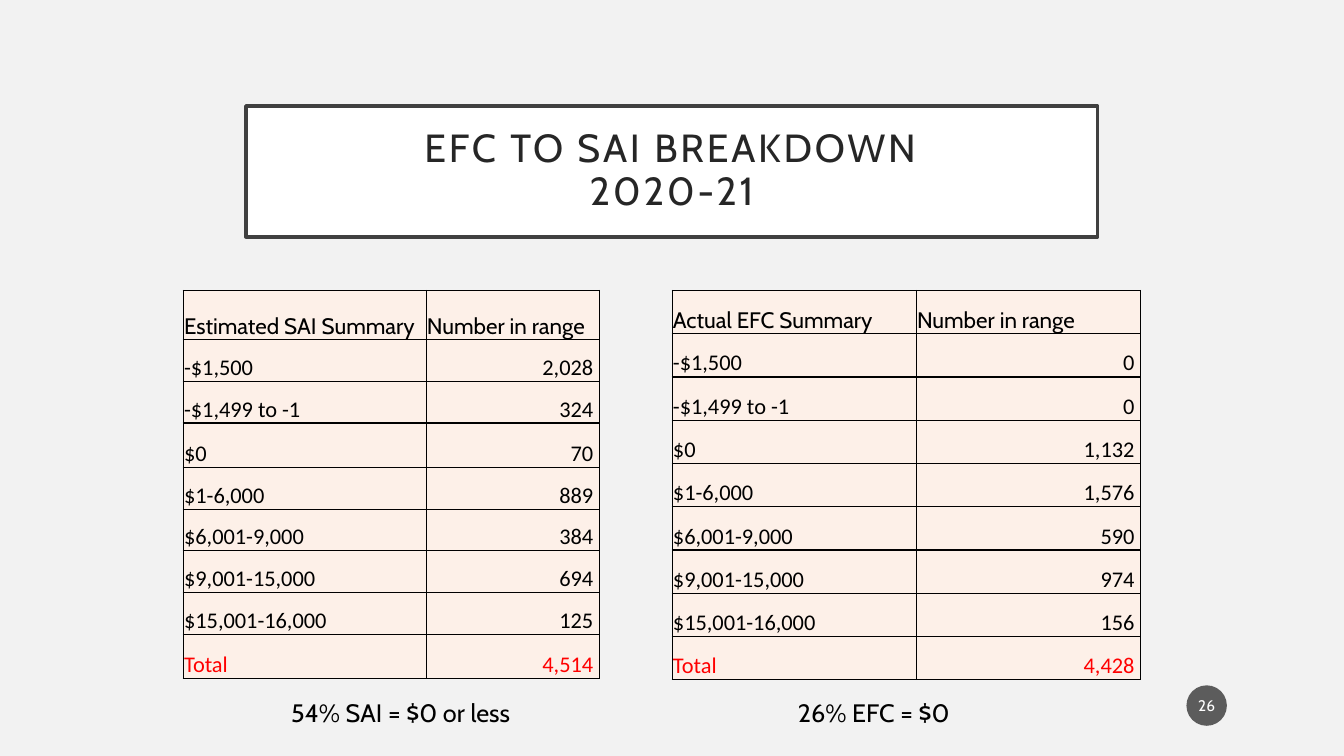
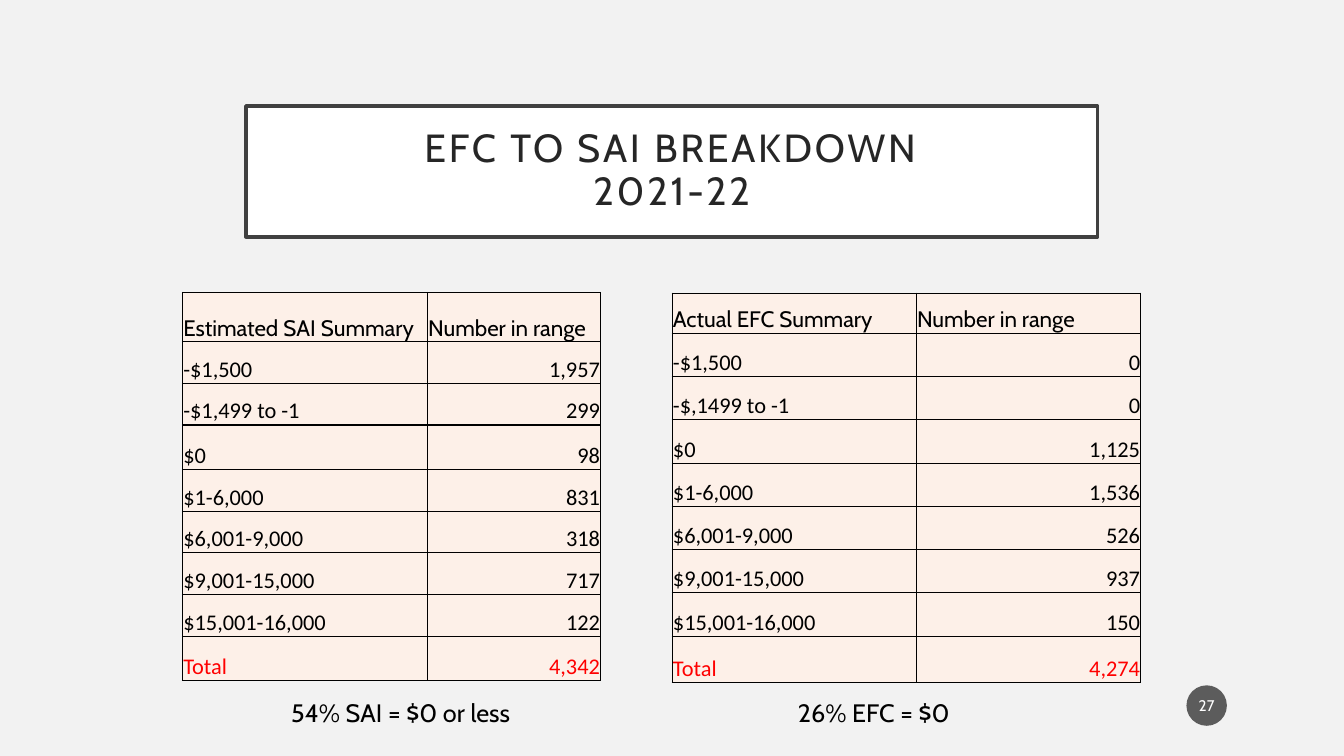
from copy import deepcopy

from lxml.etree import SubElement
from pptx import Presentation
from pptx.dml.color import RGBColor
from pptx.enum.shapes import MSO_SHAPE
from pptx.enum.text import MSO_ANCHOR, MSO_AUTO_SIZE, PP_ALIGN
from pptx.oxml.ns import qn
from pptx.util import Cm, Pt

RANGES = ["-$1,500", "-$1,499 to -1", "$0", "$1-6,000", "$6,001-9,000",
          "$9,001-15,000", "$15,001-16,000", "Total"]
SAI_HEIGHTS = [1.24, 1.05, 1.05, 1.12, 1.05, 1.05, 1.05, 1.05, 1.12]

YEARS = [
    dict(
        year="2020-21", page=26, number_inset=0.16,
        sai=dict(left=4.62, top=7.32, widths=[6.12, 4.37], heights=SAI_HEIGHTS,
                 ranges=RANGES,
                 counts=["2,028", "324", "70", "889", "384", "694", "125", "4,514"]),
        efc=dict(left=16.94, top=7.32, widths=[6.15, 5.66], heights=[1.09] * 9,
                 ranges=RANGES,
                 counts=["0", "0", "1,132", "1,576", "590", "974", "156", "4,428"]),
    ),
    dict(
        year="2021-22", page=27, number_inset=0.02,
        sai=dict(left=4.6, top=7.37, widths=[6.17, 4.37], heights=SAI_HEIGHTS,
                 ranges=RANGES,
                 counts=["1,957", "299", "98", "831", "318", "717", "122", "4,342"]),
        efc=dict(left=16.94, top=7.39, widths=[6.15, 5.66],
                 heights=[1.01] + [1.09] * 7 + [1.17],
                 ranges=RANGES[:1] + ["-$,1499 to -1"] + RANGES[2:],
                 counts=["0", "0", "1,125", "1,536", "526", "937", "150", "4,274"]),
    ),
]


def color(value):
    """Turn a hex string into a colour."""
    return RGBColor.from_string(value)


def write(frame, text, size=16, font="Cabin", ink="000000", align=PP_ALIGN.LEFT,
          leading=None, tracking=None):
    """Fill a text frame with one formatted paragraph; newlines become line breaks."""
    paragraph = frame.paragraphs[0]
    paragraph.text = text.replace("\n", "\v")
    paragraph.alignment = align
    if leading:
        paragraph.line_spacing = leading
    for run in paragraph.runs:
        run.font.size = Pt(size)
        run.font.name = font
        run.font.color.rgb = color(ink)
        if tracking:
            run.font._element.set("spc", str(tracking * 100))
    for line_break in paragraph._p.findall(qn("a:br")):
        line_break.append(deepcopy(paragraph.runs[0].font._element))


class Deck:
    """Holds the shared style and the current slide."""

    BACKGROUND = "F2F2F2"
    FRAME = "404040"
    TITLE_INK = "262626"
    CELL = "FDF0E8"
    GRID = "000000"
    TOTAL = "FF0000"
    BADGE = "1D1D1D"
    WHITE = "FFFFFF"

    def __init__(self):
        """Open a wide presentation with a plain background."""
        self.presentation = Presentation()
        self.presentation.slide_width = Cm(33.87)
        self.presentation.slide_height = Cm(19.05)
        background = self.presentation.slide_master.background.fill
        background.solid()
        background.fore_color.rgb = color(self.BACKGROUND)

    def start(self, heading):
        """Add a slide with a framed title."""
        layout = self.presentation.slide_layouts[5]
        self.slide = self.presentation.slides.add_slide(layout)
        title = self.slide.shapes.title
        title.left, title.top = Cm(6.2), Cm(2.67)
        title.width, title.height = Cm(21.46), Cm(3.3)
        title.fill.solid()
        title.fill.fore_color.rgb = color(self.WHITE)
        title.line.color.rgb = color(self.FRAME)
        title.line.width = Pt(2.5)
        frame = title.text_frame
        frame.auto_size = MSO_AUTO_SIZE.NONE
        frame.vertical_anchor = MSO_ANCHOR.MIDDLE
        frame.margin_left = frame.margin_right = Cm(0.5)
        frame.margin_top = frame.margin_bottom = Cm(0.5)
        write(frame, heading, size=28, ink=self.TITLE_INK, align=PP_ALIGN.CENTER,
              leading=0.9, tracking=2)

    def cell(self, cell, text, right_inset=0.02, **style):
        """Write, outline and fill one table cell."""
        cell.vertical_anchor = MSO_ANCHOR.BOTTOM
        cell.margin_left = cell.margin_top = Cm(0.02)
        cell.margin_right = Cm(right_inset)
        cell.margin_bottom = 0
        write(cell.text_frame, text, **style)
        properties = cell._tc.get_or_add_tcPr()
        for side in ("a:lnL", "a:lnR", "a:lnT", "a:lnB"):
            border = SubElement(properties, qn(side), w=str(Pt(1)))
            paint = SubElement(border, qn("a:solidFill"))
            SubElement(paint, qn("a:srgbClr"), val=self.GRID)
        cell.fill.solid()
        cell.fill.fore_color.rgb = color(self.CELL)

    def summary(self, heading, left, top, widths, heights, ranges, counts, number_inset):
        """Add a table of counts by range, closing with a red total."""
        table = self.slide.shapes.add_table(
            len(heights), len(widths), Cm(left), Cm(top),
            Cm(sum(widths)), Cm(sum(heights))).table
        table.first_row = table.horz_banding = False
        for column, width in zip(table.columns, widths):
            column.width = Cm(width)
        for row, height in zip(table.rows, heights):
            row.height = Cm(height)
        self.cell(table.cell(0, 0), heading)
        self.cell(table.cell(0, 1), "Number in range")
        for index, (label, count) in enumerate(zip(ranges, counts), start=1):
            style = dict(font="Calibri",
                         ink=self.TOTAL if label == "Total" else self.GRID)
            self.cell(table.cell(index, 0), label, **style)
            self.cell(table.cell(index, 1), count, right_inset=number_inset,
                      align=PP_ALIGN.RIGHT, **style)

    def page_badge(self, number):
        """Add the page number in a translucent circle."""
        badge = self.slide.shapes.add_shape(
            MSO_SHAPE.OVAL, Cm(29.9), Cm(17.27), Cm(1.02), Cm(1.02))
        badge.shadow.inherit = False
        badge.line.fill.background()
        badge.fill.solid()
        badge.fill.fore_color.rgb = color(self.BADGE)
        shade = badge._element.spPr.find(qn("a:solidFill")).find(qn("a:srgbClr"))
        SubElement(shade, qn("a:alpha"), val="70000")
        frame = badge.text_frame
        frame.vertical_anchor = MSO_ANCHOR.MIDDLE
        frame.margin_left = frame.margin_right = Cm(0.05)
        write(frame, str(number), size=11, ink=self.WHITE, align=PP_ALIGN.CENTER)

    def caption(self, text, left, width):
        """Add a line of text under a table."""
        frame = self.slide.shapes.add_textbox(
            Cm(left), Cm(17.45), Cm(width), Cm(1.02)).text_frame
        frame.word_wrap = True
        frame.auto_size = MSO_AUTO_SIZE.SHAPE_TO_FIT_TEXT
        write(frame, text, size=18)


def main():
    """Build one breakdown slide per year."""
    deck = Deck()
    for entry in YEARS:
        deck.start(f"EFC TO SAI BREAKDOWN\n{entry['year']}")
        inset = entry["number_inset"]
        deck.summary("Estimated SAI Summary", number_inset=inset, **entry["sai"])
        deck.summary("Actual EFC Summary", number_inset=inset, **entry["efc"])
        deck.page_badge(entry["page"])
        deck.caption("54% SAI = $0 or less", left=7.09, width=6.32)
        deck.caption("26% EFC = $0", left=19.86, width=5.72)
    deck.presentation.save("out.pptx")


if __name__ == "__main__":
    main()
